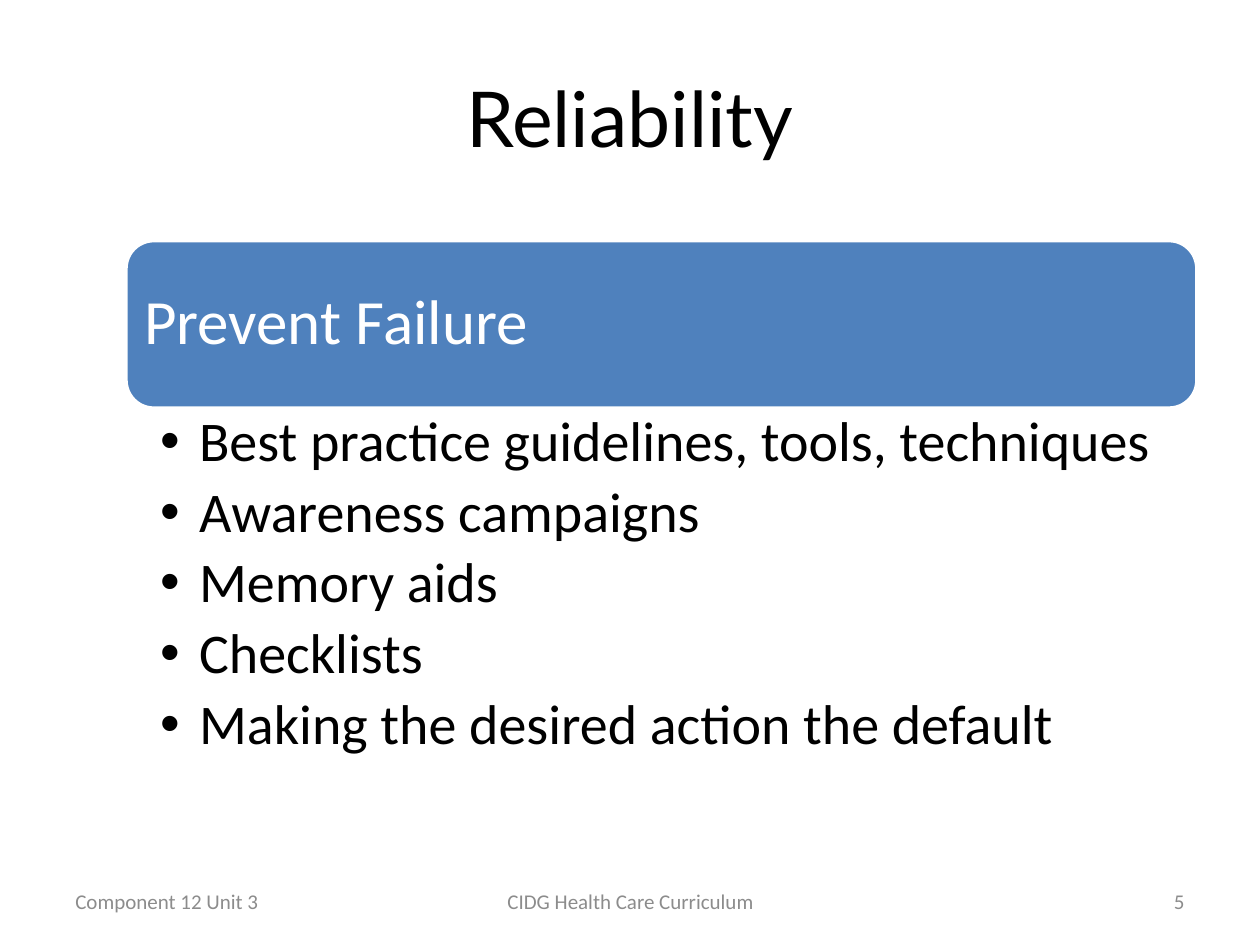
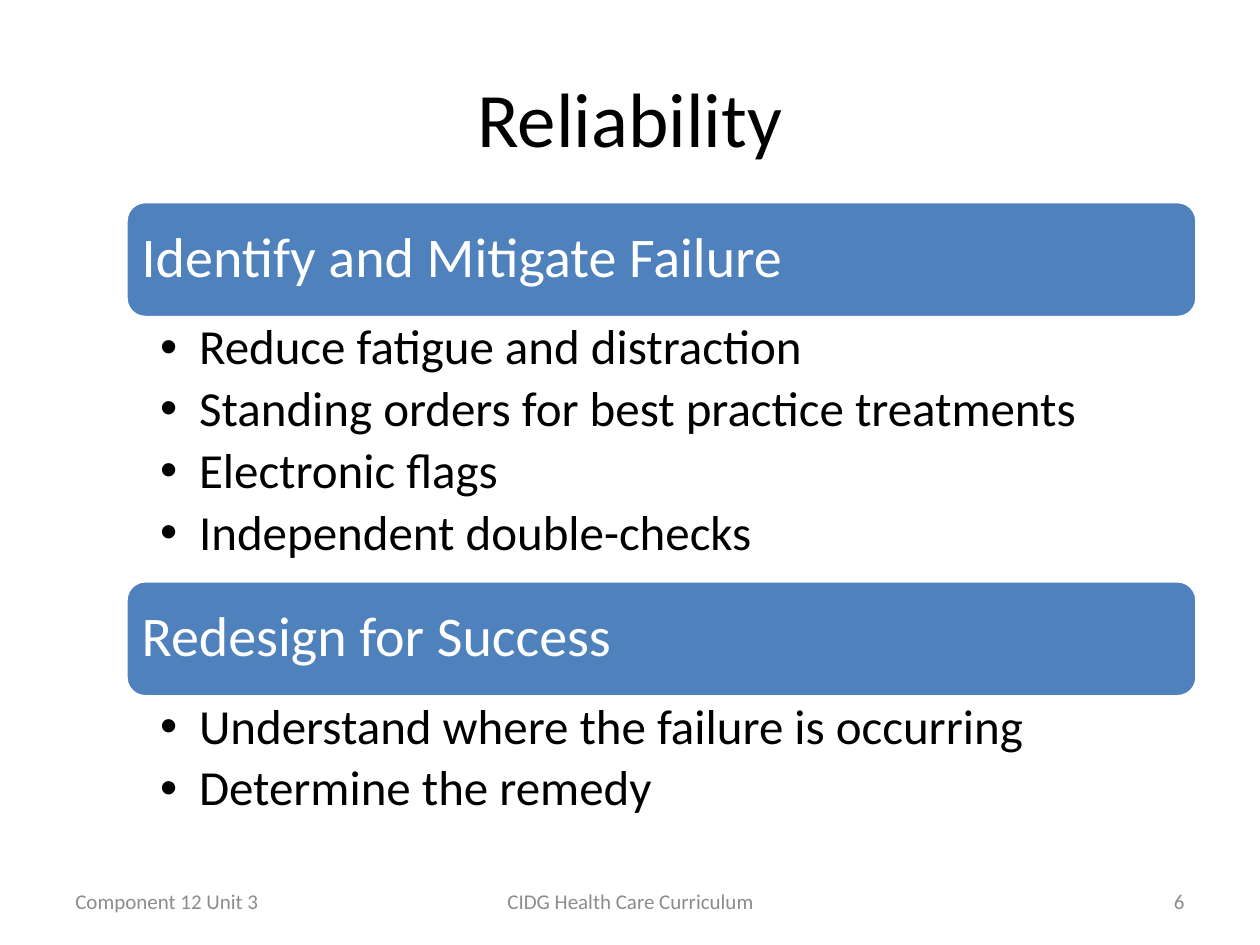
import pptx
import pptx.dml.color
import pptx.enum.shapes
import pptx.enum.text
import pptx.util

Inches = pptx.util.Inches
Pt = pptx.util.Pt
ALIGN = pptx.enum.text.PP_ALIGN
ANCHOR = pptx.enum.text.MSO_ANCHOR

BLACK, WHITE, BLUE, GREY = "000000", "FFFFFF", "4F81BD", "8C8C8C"
BODY_FONT = "Calibri"
CONTENT_LEFT, CONTENT_WIDTH = 1, 8.5
FOOTER_TOP, FOOTER_HEIGHT = 6.95, 0.4
BULLET_INDENT = 0.31

SLIDES = [
    {
        "layout": 1,
        "title_font": "Lato",
        "number": "5",
        "band_height": 1.33,
        "band_size": 36,
        "list_size": 32,
        "sections": [
            (1.91, 3.02, "Prevent Failure", [
                "Best practice guidelines, tools, techniques",
                "Awareness campaigns",
                "Memory aids",
                "Checklists",
                "Making the desired action the default",
            ]),
        ],
    },
    {
        "layout": 3,
        "title_font": BODY_FONT,
        "number": "6",
        "band_height": 0.92,
        "band_size": 32,
        "list_size": 28,
        "sections": [
            (1.6, 2.09, "Identify and Mitigate Failure", [
                "Reduce fatigue and distraction",
                "Standing orders for best practice treatments",
                "Electronic flags",
                "Independent double-checks",
            ]),
            (4.61, 1.04, "Redesign for Success", [
                "Understand where the failure is occurring",
                "Determine the remedy",
            ]),
        ],
    },
]


def rgb(value):
    return pptx.dml.color.RGBColor.from_string(value)


def apply(target, values):
    for name, value in values.items():
        setattr(target, name, value)


def place(shape, left, top, width, height):
    apply(shape, {
        "left": Inches(left),
        "top": Inches(top),
        "width": Inches(width),
        "height": Inches(height),
    })


def format_frame(frame, anchor, left=0.1, top=0.05, right=0.1, bottom=0.05):
    apply(frame, {
        "word_wrap": True,
        "auto_size": pptx.enum.text.MSO_AUTO_SIZE.NONE,
        "vertical_anchor": anchor,
        "margin_left": Inches(left),
        "margin_top": Inches(top),
        "margin_right": Inches(right),
        "margin_bottom": Inches(bottom),
    })


def write(paragraph, text, size, color, font=BODY_FONT, **paragraph_format):
    run = paragraph.add_run()
    run.text = text
    apply(run.font, {"size": Pt(size), "name": font})
    run.font.color.rgb = rgb(color)
    apply(paragraph, paragraph_format)


def set_title(slide, text, font):
    title = slide.shapes.title
    place(title, 0.5, 0.3, 9, 1.25)
    format_frame(title.text_frame, ANCHOR.MIDDLE)
    write(title.text_frame.paragraphs[0], text, 44, BLACK, font,
          alignment=ALIGN.CENTER)


def add_band(slide, top, height, text, size):
    band = slide.shapes.add_shape(
        pptx.enum.shapes.MSO_SHAPE.ROUNDED_RECTANGLE,
        Inches(CONTENT_LEFT), Inches(top), Inches(CONTENT_WIDTH), Inches(height))
    band.shadow.inherit = False
    band.fill.solid()
    band.fill.fore_color.rgb = rgb(BLUE)
    band.line.color.rgb = rgb(WHITE)
    band.line.width = Pt(2)
    format_frame(band.text_frame, ANCHOR.MIDDLE, 0.08, 0.08, 0.08, 0.08)
    write(band.text_frame.paragraphs[0], text, size, WHITE,
          alignment=ALIGN.LEFT, line_spacing=0.9)


def fill_list(body, top, height, items, size):
    place(body, CONTENT_LEFT, top, CONTENT_WIDTH, height)
    frame = body.text_frame
    format_frame(frame, ANCHOR.TOP, 0.27, 0.04, 0.22, 0.04)
    for index, item in enumerate(items):
        paragraph = frame.add_paragraph() if index else frame.paragraphs[0]
        write(paragraph, item, size, BLACK, line_spacing=0.9,
              space_before=Pt(0), space_after=Pt(0.18 * size))
        properties = paragraph._p.get_or_add_pPr()
        properties.set("marL", str(Inches(BULLET_INDENT)))
        properties.set("indent", str(-Inches(BULLET_INDENT)))


def add_footer(slide, number):
    for left, width, text, alignment in [
        (0.5, 2.33, "Component 12 Unit 3", ALIGN.LEFT),
        (3.42, 3.17, "CIDG Health Care Curriculum", ALIGN.CENTER),
        (7.17, 2.33, number, ALIGN.RIGHT),
    ]:
        footer = slide.shapes.add_textbox(
            Inches(left), Inches(FOOTER_TOP), Inches(width), Inches(FOOTER_HEIGHT))
        format_frame(footer.text_frame, ANCHOR.MIDDLE)
        write(footer.text_frame.paragraphs[0], text, 12, GREY, alignment=alignment)


def add_reliability_slide(presentation, content):
    layout = presentation.slide_layouts[content["layout"]]
    slide = presentation.slides.add_slide(layout)
    set_title(slide, "Reliability", content["title_font"])
    bodies = list(slide.placeholders)[1:]
    band_height = content["band_height"]
    for body, (top, list_height, heading, items) in zip(bodies, content["sections"]):
        add_band(slide, top, band_height, heading, content["band_size"])
        fill_list(body, top + band_height, list_height, items, content["list_size"])
    add_footer(slide, content["number"])


def main():
    presentation = pptx.Presentation()
    apply(presentation, {"slide_width": Inches(10), "slide_height": Inches(7.5)})
    for content in SLIDES:
        add_reliability_slide(presentation, content)
    presentation.save("out.pptx")


if __name__ == "__main__":
    main()
